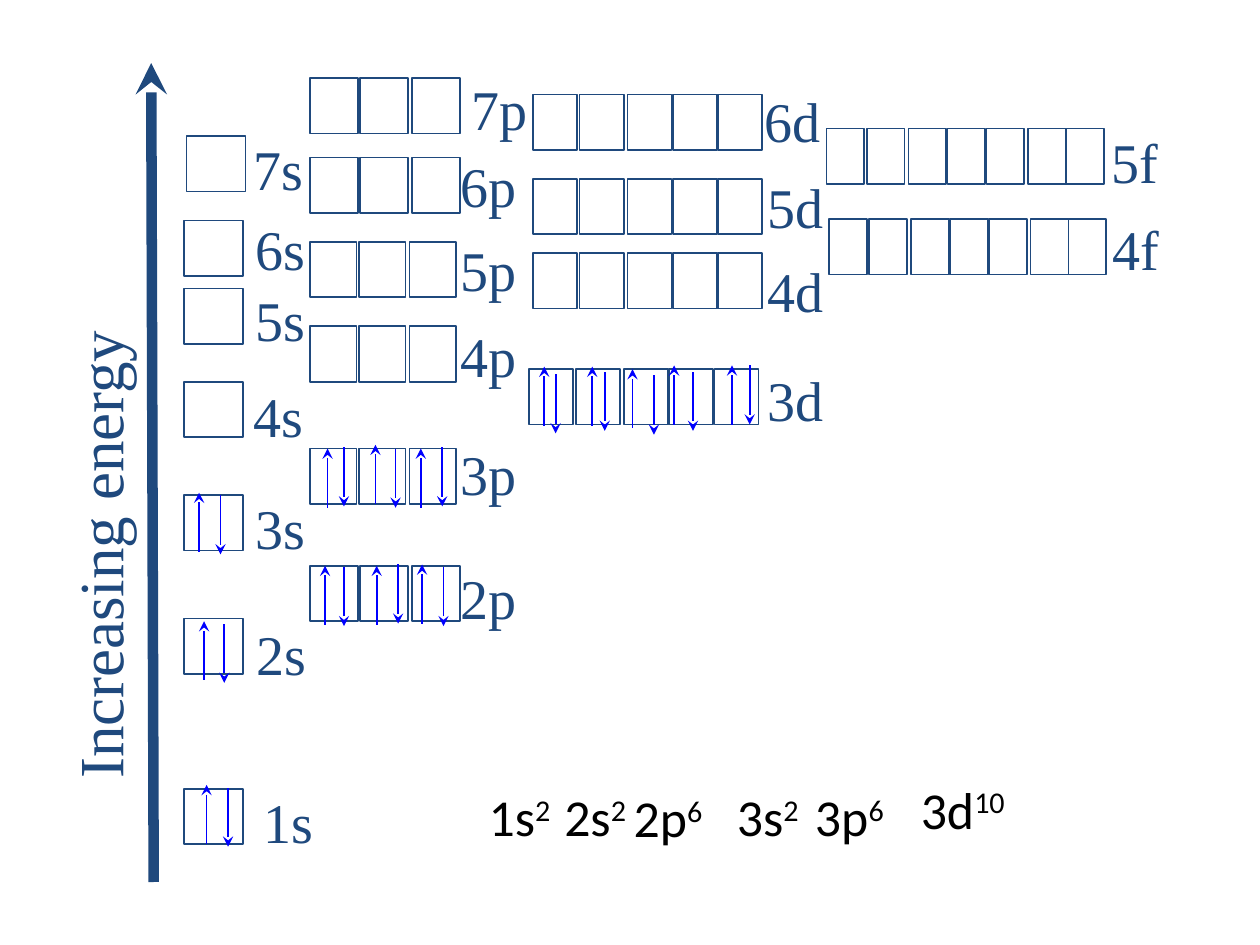
from lxml import etree
from pptx import Presentation
from pptx.dml.color import RGBColor
from pptx.enum.shapes import MSO_CONNECTOR, MSO_SHAPE
from pptx.oxml.ns import qn
from pptx.util import Emu, Pt

STRAIGHT = MSO_CONNECTOR.STRAIGHT
RECTANGLE = MSO_SHAPE.RECTANGLE
SCALE = 9144
NAVY, BLUE, BLACK = "1F497D", "0000FF", "000000"
SERIF, SANS = "Times New Roman", "Calibri"

BOX_HEIGHT = 44
LABEL_HEIGHT = 63
SPIN_LENGTH = 47

SINGLE = (0,)
P_NARROW = (0, 39, 79)
P_WIDE = (0, 40, 81)
D_OFFSETS = (0, 37, 75, 111, 147)
F_OFFSETS = (0, 32, 65, 96, 127, 160, 190)

# name, left, top, offsets, box width, label left, label top
SUBSHELLS = [
    ("1s", 146, 626, SINGLE, 47, 199, 620),
    ("2s", 146, 491, SINGLE, 47, 194, 487),
    ("3s", 146, 393, SINGLE, 47, 193, 387),
    ("4s", 146, 303, SINGLE, 47, 191, 298),
    ("5s", 146, 229, SINGLE, 47, 193, 222),
    ("6s", 146, 175, SINGLE, 47, 193, 165),
    ("7s", 148, 108, SINGLE, 47, 191, 102),
    ("2p", 246, 449, P_WIDE, 38, 356, 442),
    ("3p", 246, 356, P_NARROW, 37, 356, 344),
    ("4p", 246, 259, P_NARROW, 37, 356, 250),
    ("5p", 246, 192, P_NARROW, 37, 356, 182),
    ("6p", 246, 125, P_WIDE, 38, 356, 115),
    ("7p", 246, 62, P_WIDE, 38, 364, 54),
    ("3d", 420, 293, D_OFFSETS, 35, 599, 285),
    ("4d", 423, 201, D_OFFSETS, 35, 599, 199),
    ("5d", 423, 142, D_OFFSETS, 35, 599, 132),
    ("6d", 423, 75, D_OFFSETS, 35, 597, 64),
    ("4f", 658, 174, F_OFFSETS, 30, 873, 165),
    ("5f", 656, 102, F_OFFSETS, 30, 872, 96),
]

SPINS_UP = [
    (164, 623), (162, 493), (158, 391),
    (258, 449), (299, 449), (335, 448),
    (260, 356), (298, 353), (334, 356),
    (432, 291), (470, 291), (502, 293), (535, 290), (581, 290),
]
SPINS_DOWN = [
    (181, 625), (178, 495), (175, 393),
    (273, 450), (316, 448), (352, 450),
    (273, 355), (314, 356), (351, 355),
    (441, 297), (480, 295), (519, 298), (550, 295), (595, 290),
]

CONFIGURATION = [
    ("1s", "2", 378, 618, 100),
    ("2s", "2", 438, 618, 101),
    ("2p", "6", 493, 619, 99),
    ("3s", "2", 575, 618, 99),
    ("3p", "6", 637, 618, 96),
    ("3d", "10", 721, 612, 96),
]


def px(length):
    return Emu(length * SCALE)


def rgb(code):
    return RGBColor.from_string(code)


def style_span(span, size, font, color):
    span.font.size = Pt(size)
    span.font.name = font
    span.font.color.rgb = rgb(color)


def add_text(page, text, left, top, width, height, size, font, color):
    box = page.shapes.add_textbox(px(left), px(top), px(width), px(height))
    box.text_frame.word_wrap = True
    para = box.text_frame.paragraphs[0]
    para.text = text
    style_span(para.runs[0], size, font, color)
    return box


def add_arrow(page, tip, tail, color, weight):
    arrow = page.shapes.add_connector(
        STRAIGHT, px(tip[0]), px(tip[1]), px(tail[0]), px(tail[1]))
    arrow.line.color.rgb = rgb(color)
    arrow.line.width = Pt(weight)
    outline = arrow.line._get_or_add_ln()
    etree.SubElement(outline, qn("a:headEnd"), type="stealth")
    etree.SubElement(arrow._element.spPr, qn("a:effectLst"))


def add_subshell(page, name, left, top, offsets, width, label_left, label_top):
    for offset in offsets:
        box = page.shapes.add_shape(
            RECTANGLE, px(left + offset), px(top), px(width), px(BOX_HEIGHT))
        box.shadow.inherit = False
        box.fill.background()
        box.line.color.rgb = rgb(NAVY)
        box.line.width = Pt(1)
    label_width = 88 if offsets == SINGLE else 68
    add_text(page, name, label_left, label_top, label_width, LABEL_HEIGHT,
             32, SERIF, NAVY)


def add_term(page, orbital, electrons, left, top, width):
    box = add_text(page, orbital, left, top, width, 56, 29.6, SANS, BLACK)
    para = box.text_frame.paragraphs[0]
    span = para.add_run()
    span.text = electrons
    style_span(span, 29.6, SANS, BLACK)
    span.font._element.set("baseline", "30000")
    spacing = etree.SubElement(para._p.get_or_add_pPr(), qn("a:spcBef"))
    etree.SubElement(spacing, qn("a:spcPct"), val="20000")


def main():
    deck = Presentation()
    deck.slide_width, deck.slide_height = px(1000), px(750)
    page = deck.slides.add_slide(deck.slide_layouts[6])

    add_arrow(page, (120, 50), (122, 700), NAVY, 6)
    axis_title = add_text(page, "Increasing energy", -154, 361, 464, 70,
                          36, SERIF, NAVY)
    axis_title.rotation = 270

    for subshell in SUBSHELLS:
        add_subshell(page, *subshell)
    for x, top in SPINS_UP:
        add_arrow(page, (x, top), (x, top + SPIN_LENGTH), BLUE, 1)
    for x, top in SPINS_DOWN:
        add_arrow(page, (x, top + SPIN_LENGTH), (x, top), BLUE, 1)
    for term in CONFIGURATION:
        add_term(page, *term)

    deck.save("out.pptx")


if __name__ == "__main__":
    main()
